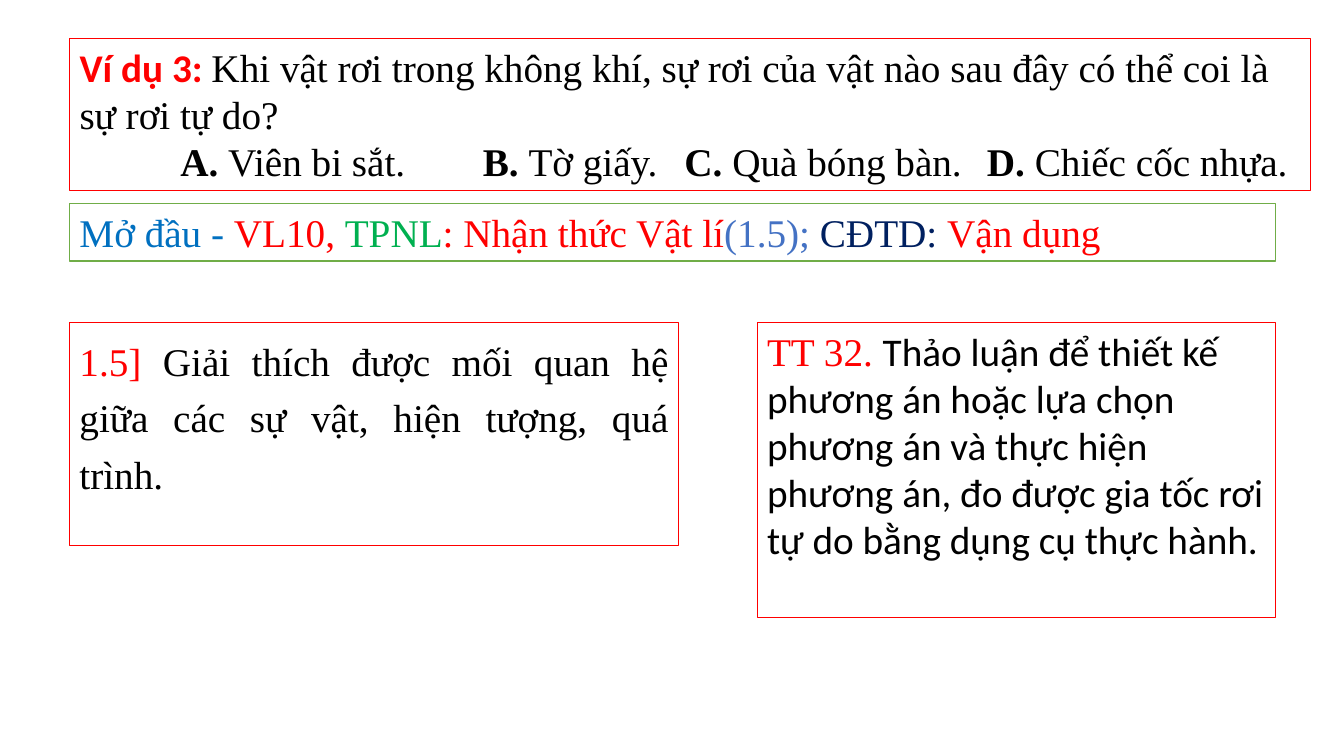
from lxml.etree import SubElement
from pptx import Presentation
from pptx.dml.color import RGBColor
from pptx.enum.text import MSO_ANCHOR, PP_ALIGN
from pptx.oxml.ns import qn
from pptx.util import Inches, Pt

COLORS = {"red": "FF0000", "black": "000000", "blue": "0070C0", "green": "00B050",
          "sky": "4472C4", "navy": "002060", "leaf": "70AD47"}
SERIF, SANS = "Times New Roman", "Calibri"
SIZE = 28

# Answers: letter, wording, tab stop in inches
ANSWERS = [("A", "Viên bi sắt.", 1), ("B", "Tờ giấy.", 4),
           ("C", "Quà bóng bàn.", 6), ("D", "Chiếc cốc nhựa.", 9)]

# Runs: wording, colour, font, bold
QUESTION = [
    ("Ví dụ 3: ", "red", SANS, True),
    ("Khi vật rơi trong không khí, sự rơi của vật nào sau đây "
     "có thể coi là sự rơi tự do?", "black", SERIF, False)]
CHOICES = [run for letter, words, _ in ANSWERS
           for run in ((f"\t{letter}. ", "black", SERIF, True),
                       (words, "black", SERIF, False))]
TAGS = [(words, color, SERIF, False) for words, color in (
    ("Mở đầu - ", "blue"), ("VL10, ", "red"), ("TPNL", "green"),
    (": Nhận thức Vật lí", "red"), ("(1.5); ", "sky"),
    ("CĐTD: ", "navy"), ("Vận dụng", "red"))]
SKILL = [
    ("1.5] ", "red", SERIF, False),
    ("Giải thích được mối quan hệ giữa các sự vật, hiện tượng, quá trình.",
     "black", SERIF, False)]
TASK = [
    ("TT 32. ", "red", SERIF, False),
    ("Thảo luận để thiết kế phương án hoặc lựa chọn phương án và thực hiện "
     "phương án, đo được gia tốc rơi tự do bằng dụng cụ thực hành.",
     "black", SANS, False)]

# Grid lines in inches: left edges, right edges, row tops
LEFT, MID = 0.69, 7.51
HALF, RIGHT, WIDE = 6.73, 12.65, 13.0
TOP, BAND, BODY = 0.38, 2.02, 3.2

# Boxes: left, top, right, height, border, paragraphs
BOXES = [
    (LEFT, TOP, WIDE, 1.51, "red", [QUESTION, CHOICES]),
    (LEFT, BAND, RIGHT, 0.57, "leaf", [TAGS]),
    (LEFT, BODY, HALF, 2.21, "red", [SKILL]),
    (MID, BODY, RIGHT, 2.93, "red", [TASK])]


def paint(name):
    return RGBColor.from_string(COLORS[name])


def write(para, runs):
    for words, color, face, bold in runs:
        run = para.add_run()
        run.text = words
        font = run.font
        font.size, font.name, font.bold = Pt(SIZE), face, bold
        font.color.rgb = paint(color)


def set_tabs(para):
    tabs = SubElement(para._p.get_or_add_pPr(), qn("a:tabLst"))
    for *_, stop in ANSWERS:
        SubElement(tabs, qn("a:tab"), pos=str(Inches(stop)), algn="l")


def add_box(slide, left, top, right, height, border, paras):
    box = slide.shapes.add_textbox(
        Inches(left), Inches(top), Inches(right - left), Inches(height))
    box.line.color.rgb = paint(border)
    box.line.width = Pt(0.75)
    frame = box.text_frame
    frame.word_wrap = True
    frame.vertical_anchor = MSO_ANCHOR.TOP
    for i, runs in enumerate(paras):
        para = frame.add_paragraph() if i else frame.paragraphs[0]
        para.alignment = PP_ALIGN.LEFT
        if runs is SKILL:
            para.alignment = PP_ALIGN.JUSTIFY
            para.line_spacing = 1.2
            para.space_after = Pt(8)
        if runs is CHOICES:
            set_tabs(para)
        write(para, runs)


def main():
    deck = Presentation()
    deck.slide_width, deck.slide_height = Inches(13.33), Inches(7.5)
    slide = deck.slides.add_slide(deck.slide_layouts[6])
    for box in BOXES:
        add_box(slide, *box)
    deck.save("out.pptx")


if __name__ == "__main__":
    main()
